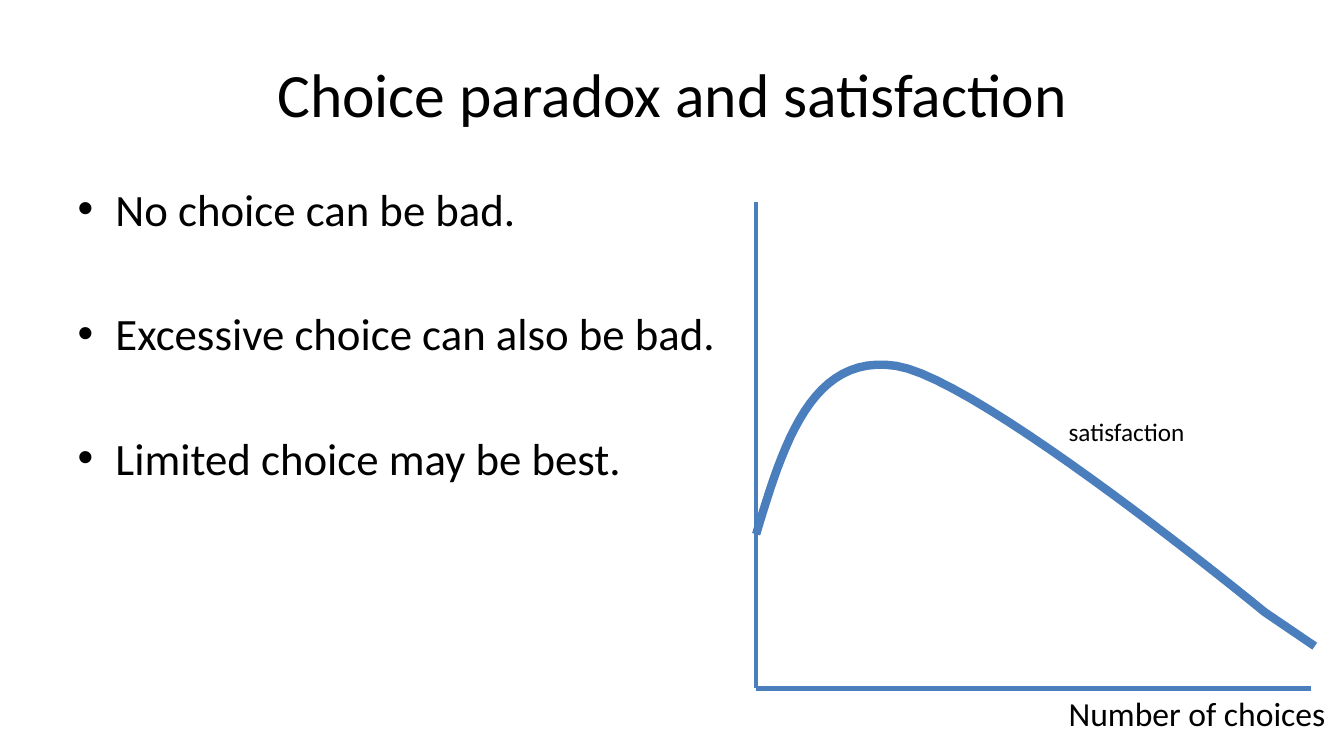
from pptx import Presentation
from pptx.dml.color import RGBColor
from pptx.enum.shapes import MSO_CONNECTOR
from pptx.enum.text import MSO_ANCHOR, MSO_AUTO_SIZE, PP_ALIGN
from pptx.oxml.ns import qn
from pptx.util import Inches, Pt
from lxml import etree

BLUE = RGBColor(0x4B, 0x7E, 0xBC)
BLACK = RGBColor(0, 0, 0)
STRAIGHT = MSO_CONNECTOR.STRAIGHT
MIDDLE = MSO_ANCHOR.MIDDLE
CENTER = PP_ALIGN.CENTER
NO_FIT = MSO_AUTO_SIZE.NONE


def place(shape, left, top, width, height):
    shape.left, shape.top = Inches(left), Inches(top)
    shape.width, shape.height = Inches(width), Inches(height)


def style(par, size):
    par.font.name = "Calibri"
    par.font.size = Pt(size)
    par.font.color.rgb = BLACK


prs = Presentation()
prs.slide_width, prs.slide_height = Inches(13.33), Inches(7.5)
slide = prs.slides.add_slide(prs.slide_layouts[1])
shapes = slide.shapes

# Title
title = shapes.title
place(title, 0.67, 0.3, 12, 1.25)
frame = title.text_frame
frame.text = "Choice paradox and satisfaction"
frame.vertical_anchor = MIDDLE
frame.auto_size = NO_FIT
frame.paragraphs[0].alignment = CENTER
style(frame.paragraphs[0], 44)

# Bullet list, spread by paragraph spacing
body = slide.placeholders[1]
place(body, 0.67, 1.75, 12, 4.95)
frame = body.text_frame
frame.text = "\n".join([
    "No choice can be bad.",
    "Excessive choice can also be bad.",
    "Limited choice may be best.",
])
frame.auto_size = NO_FIT
for i, par in enumerate(frame.paragraphs):
    style(par, 32)
    par.space_before = Pt(50.5 if i else 0)

# Axes
left, base = 7.5, 6.83
for x, y in [(left, 2), (13, base)]:
    axis = shapes.add_connector(
        STRAIGHT, Inches(x), Inches(y), Inches(left), Inches(base))
    axis.line.color.rgb = BLUE
    axis.line.width = Pt(3)
    etree.SubElement(axis._element.spPr, qn("a:effectLst"))

# Satisfaction curve: two Bezier arcs and a straight tail
arcs = [
    [(7.5, 5.3), (7.77, 4.4), (8.05, 3.5), (8.89, 3.63)],
    [(8.89, 3.63), (9.73, 3.76), (12.54, 6.07), (12.54, 6.07)],
]
steps = 24
points = []
for arc in arcs:
    for i in range(1, steps + 1):
        t = i / steps
        u = 1 - t
        parts = (u**3, 3 * u * u * t, 3 * u * t * t, t**3)
        points.append([Inches(sum(w * p[k] for w, p in zip(parts, arc)))
                       for k in (0, 1)])
points.append((Inches(13.04), Inches(6.41)))
pen = shapes.build_freeform(Inches(7.5), Inches(5.3))
pen.add_line_segments(points, close=False)
curve = pen.convert_to_shape()
curve.shadow.inherit = False
curve.fill.background()
curve.line.color.rgb = BLUE
curve.line.width = Pt(6)

# Labels
for text, top, width, height, size in [
    ("Number of choices", base, 2.75, 0.5, 24),
    ("satisfaction", 4.08, 1.42, 0.4, 18),
]:
    label = shapes.add_textbox(
        Inches(10.5), Inches(top), Inches(width), Inches(height))
    label.text_frame.word_wrap = True
    label.text_frame.text = text
    style(label.text_frame.paragraphs[0], size)

prs.save("out.pptx")
